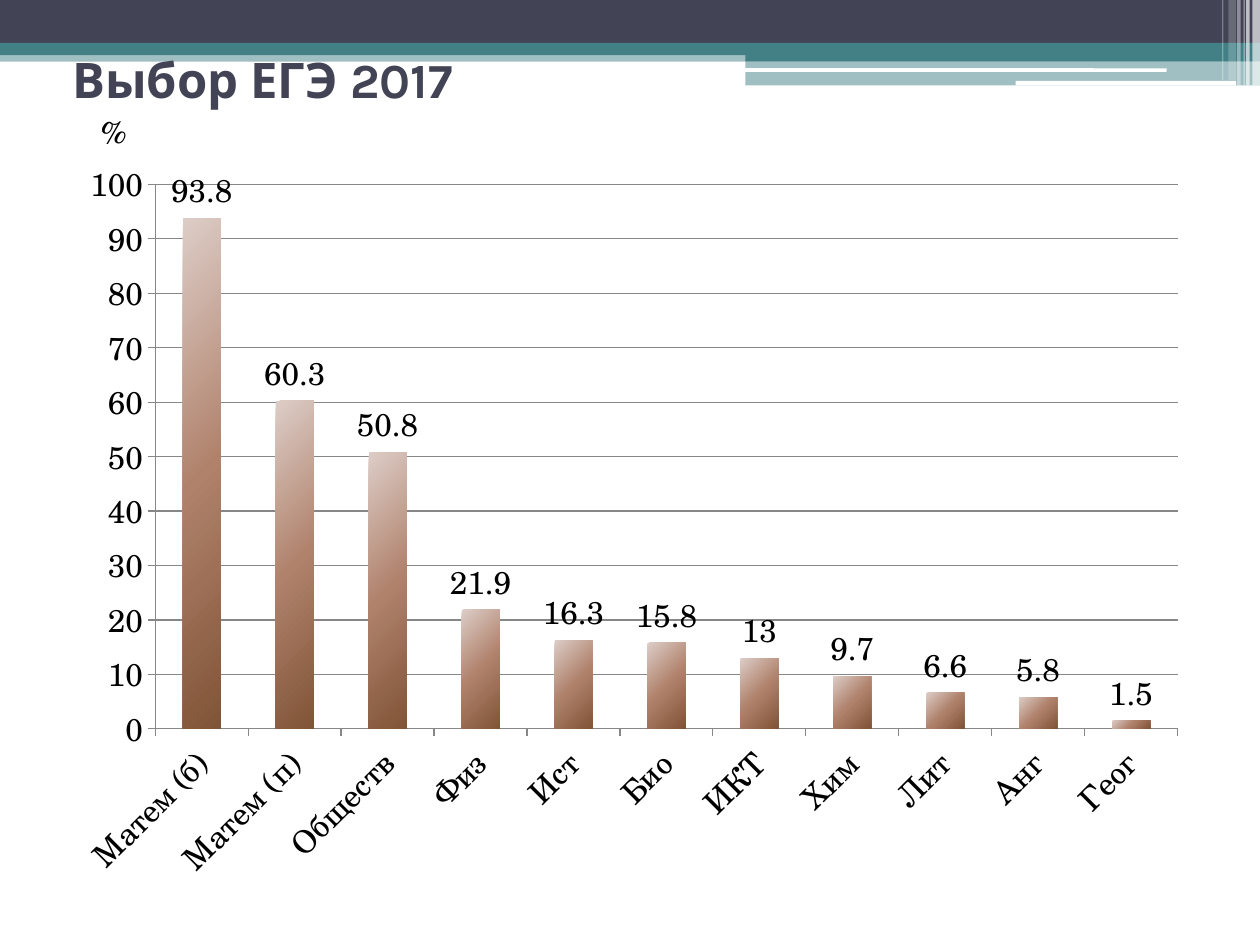
"""Build a slide with a column chart of exam choices in 2017."""
from copy import deepcopy

from lxml import etree
from pptx import Presentation
from pptx.chart.data import CategoryChartData
from pptx.dml.color import RGBColor
from pptx.enum import chart as ch, shapes, text
from pptx.oxml import ns
from pptx.util import Pt

TITLE = "Выбор ЕГЭ 2017"
UNIT = "%"
CHOICES = [
    ("Матем (б)", 93.8), ("Матем (п)", 60.3), ("Обществ", 50.8), ("Физ", 21.9),
    ("Ист", 16.3), ("Био", 15.8), ("ИКТ", 13), ("Хим", 9.7),
    ("Лит", 6.6), ("Анг", 5.8), ("Геог", 1.5),
]
TITLE_FONT, BODY_FONT = "Karla", "TeX Gyre Schola"
NAVY, TEAL, WHITE, BLACK, GRAY = "424456", "438086", "FFFFFF", "000000", "878787"
BAR_STOPS = [("DDCDC7", 0), ("B0826C", 0.5), ("805437", 1)]
PLOT = {"x": 0.084, "y": 0.05, "w": 0.896, "h": 0.727}

BANDS = [
    (0, 28.8, 720, 6.5, TEAL, 50),
    (0, 0, 720, 24.5, NAVY, 100),
    (0, 24.5, 720, 7, TEAL, 100),
    (426, 28, 294, 7, TEAL, 100),
    (426, 34.6, 294, 14.2, TEAL, 50),
]
GROOVES = [(425.5, 39, 241.2, 2, WHITE, 100), (580.3, 46.2, 126, 2.6, WHITE, 100)]
STRIPES = [
    (715.7, 4.3, 48.8, 65), (712.1, 2, 48.8, 65), (710.6, 0.7, 48.8, 60),
    (707, 2, 48.8, 40), (702, 4.3, 46, 20), (698.4, 0.7, 46, 30),
]


def rgb(color):
    return RGBColor.from_string(color)


def style(font, name, size, color, bold=False):
    font.name, font.size, font.bold = name, Pt(size), bold
    font.color.rgb = rgb(color)


def add_band(slide, kind, left, top, width, height, color, opacity):
    band = slide.shapes.add_shape(kind, Pt(left), Pt(top), Pt(width), Pt(height))
    band.shadow.inherit = False
    band.line.fill.background()
    band.fill.solid()
    band.fill.fore_color.rgb = rgb(color)
    if opacity < 100:
        tint = band.fill._xPr.find(".//" + ns.qn("a:srgbClr"))
        etree.SubElement(tint, ns.qn("a:alpha"), val=str(opacity * 1000))


def add_header(slide):
    rect, rounded = shapes.MSO_SHAPE.RECTANGLE, shapes.MSO_SHAPE.ROUNDED_RECTANGLE
    for band in BANDS:
        add_band(slide, rect, *band)
    for groove in GROOVES:
        add_band(slide, rounded, *groove)
    for left, width, height, opacity in STRIPES:
        add_band(slide, rect, left, 0, width, height, WHITE, opacity)


def add_title(slide):
    title = slide.shapes.title
    title.left, title.top, title.width, title.height = Pt(34), Pt(0), Pt(648), Pt(90)
    frame = title.text_frame
    frame.text = TITLE
    frame.vertical_anchor = text.MSO_ANCHOR.MIDDLE
    frame.paragraphs[0].alignment = text.PP_ALIGN.LEFT
    style(frame.paragraphs[0].runs[0].font, TITLE_FONT, 28, NAVY, True)
    slide.shapes._spTree.append(title._element)


def fill_bars(series):
    fill = series.format.fill
    fill.gradient()
    fill.gradient_angle = 315
    stop_list = fill._fill._gradFill.find(ns.qn("a:gsLst"))
    stop_list.append(deepcopy(stop_list[-1]))
    for stop, (color, position) in zip(fill.gradient_stops, BAR_STOPS):
        stop.color.rgb = rgb(color)
        stop.position = position


def place_plot(chart):
    plot_area = chart._chartSpace.find(".//" + ns.qn("c:plotArea"))
    layout = plot_area.find(ns.qn("c:layout"))
    if layout is None:
        layout = etree.Element(ns.qn("c:layout"))
        plot_area.insert(0, layout)
    manual = etree.SubElement(layout, ns.qn("c:manualLayout"))
    settings = {"layoutTarget": "inner", "xMode": "edge", "yMode": "edge", **PLOT}
    for name, value in settings.items():
        etree.SubElement(manual, ns.qn("c:" + name), val=str(value))


def add_choice_chart(slide):
    data = CategoryChartData()
    data.categories = [subject for subject, _ in CHOICES]
    data.add_series("Series 1", [share for _, share in CHOICES])
    chart = slide.shapes.add_chart(
        ch.XL_CHART_TYPE.COLUMN_CLUSTERED, Pt(34), Pt(84), Pt(652), Pt(428), data).chart
    chart.has_legend = chart.has_title = False
    style(chart.font, BODY_FONT, 18, BLACK)
    place_plot(chart)

    bars = chart.plots[0]
    bars.gap_width = 145
    bars.vary_by_categories = False
    fill_bars(bars.series[0])
    bars.has_data_labels = True
    bars.data_labels.show_value = True
    bars.data_labels.position = ch.XL_LABEL_POSITION.OUTSIDE_END

    subjects, shares = chart.category_axis, chart.value_axis
    shares.minimum_scale, shares.maximum_scale, shares.major_unit = 0, 100, 10
    shares.has_major_gridlines = True
    for line in (subjects.format.line, shares.format.line,
                 shares.major_gridlines.format.line):
        line.color.rgb = rgb(GRAY)
        line.width = Pt(0.75)
    for axis in (subjects, shares):
        axis.major_tick_mark = ch.XL_TICK_MARK.OUTSIDE
        style(axis.tick_labels.font, BODY_FONT, 18, BLACK)
    subjects._element.find(".//" + ns.qn("a:bodyPr")).set("rot", "-2700000")


def add_unit(slide):
    frame = slide.shapes.add_textbox(Pt(50.4), Pt(61.2), Pt(39.6), Pt(29)).text_frame
    frame.word_wrap = True
    frame.text = UNIT
    style(frame.paragraphs[0].runs[0].font, BODY_FONT, 18, BLACK)


def main():
    deck = Presentation()
    deck.slide_width, deck.slide_height = Pt(720), Pt(540)
    slide = deck.slides.add_slide(deck.slide_layouts[5])
    add_header(slide)
    add_title(slide)
    add_choice_chart(slide)
    add_unit(slide)
    deck.save("out.pptx")


if __name__ == "__main__":
    main()
